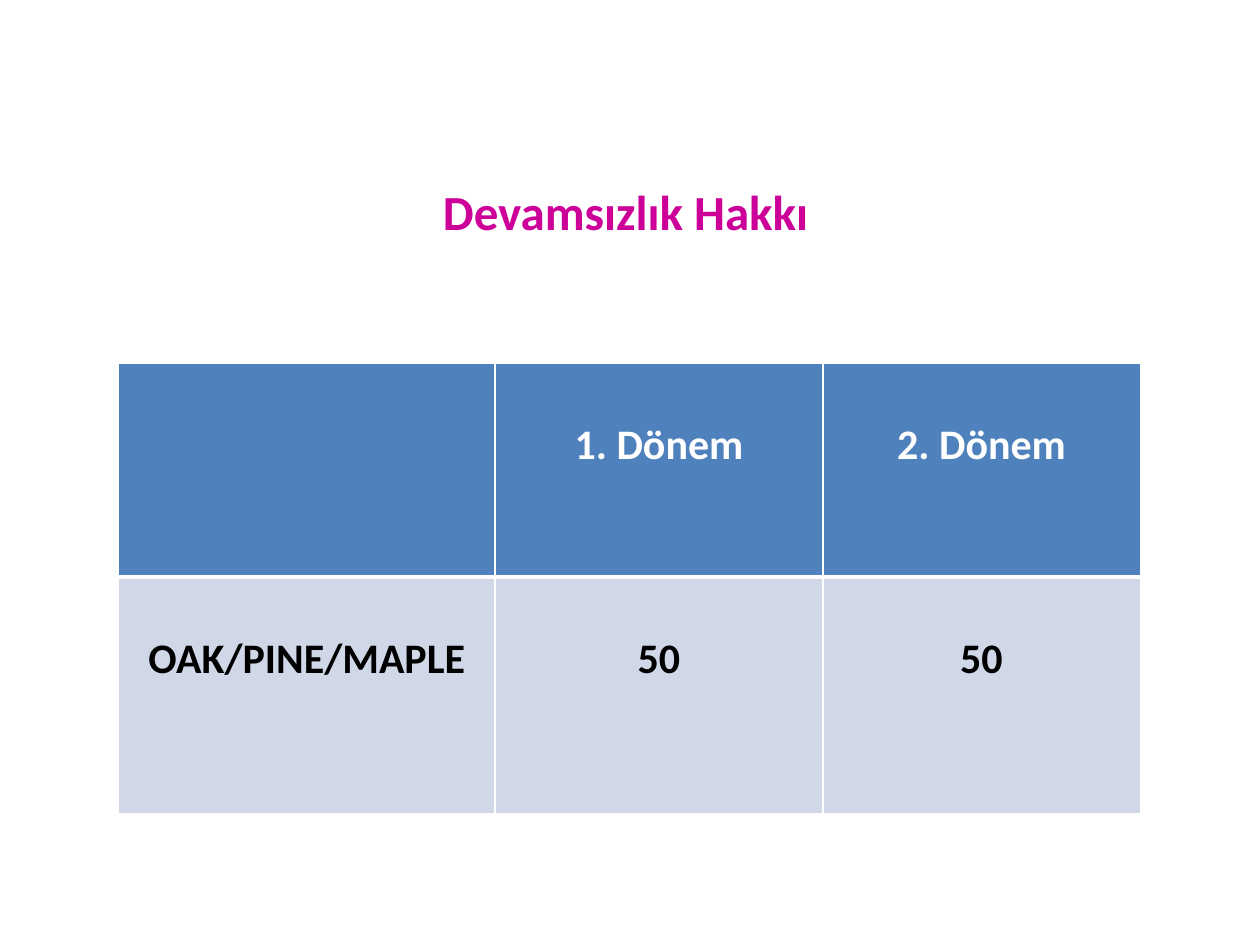
from dataclasses import dataclass

from lxml.etree import SubElement
from pptx import Presentation
from pptx.dml.color import RGBColor
from pptx.enum.text import PP_ALIGN as Align
from pptx.oxml.ns import qn
from pptx.util import Inches, Pt

FONT = "Calibri"
MAGENTA = RGBColor(0xCC, 0x00, 0x99)
BLUE = RGBColor(0x4F, 0x81, 0xBD)
PALE_BLUE = RGBColor(0xD0, 0xD8, 0xE8)
WHITE = RGBColor(0xFF, 0xFF, 0xFF)
BLACK = RGBColor(0x00, 0x00, 0x00)

COLUMN_WIDTHS = (2.99, 2.6, 2.52)
THIN, THICK = 1, 3


@dataclass(frozen=True)
class TableRow:
    labels: tuple[str, ...]
    height: float
    fill: RGBColor
    color: RGBColor
    top_line: int
    bottom_line: int


ROWS = (
    TableRow(("", "1. Dönem", "2. Dönem"), 1.7, BLUE, WHITE, THIN, THICK),
    TableRow(("OAK/PINE/MAPLE", "50", "50"), 1.88, PALE_BLUE, BLACK, THICK, THIN),
)


def write_centered(frame, text: str, size: int, color: RGBColor) -> None:
    para = frame.paragraphs[0]
    para.alignment = Align.CENTER
    span = para.add_run()
    span.text = text
    span.font.name = FONT
    span.font.size = Pt(size)
    span.font.bold = True
    span.font.color.rgb = color


def add_borders(cell, top: int, bottom: int) -> None:
    """Draw white cell borders; call before the cell is filled."""
    properties = cell._tc.get_or_add_tcPr()
    for side, width in (("L", THIN), ("R", THIN), ("T", top), ("B", bottom)):
        line = SubElement(properties, qn(f"a:ln{side}"), w=str(Pt(width)))
        fill = SubElement(line, qn("a:solidFill"))
        SubElement(fill, qn("a:srgbClr"), val=str(WHITE))


def add_title(slide) -> None:
    box = slide.shapes.add_textbox(Inches(2.01), Inches(1.39), Inches(5.91), Inches(0.57))
    box.text_frame.word_wrap = True
    write_centered(box.text_frame, "Devamsızlık Hakkı", 28, MAGENTA)


def add_absence_table(slide) -> None:
    table = slide.shapes.add_table(
        len(ROWS), len(COLUMN_WIDTHS), Inches(0.94), Inches(2.88),
        Inches(sum(COLUMN_WIDTHS)), Inches(sum(row.height for row in ROWS)),
    ).table
    for column, width in zip(table.columns, COLUMN_WIDTHS):
        column.width = Inches(width)
    for table_row, row in zip(table.rows, ROWS):
        table_row.height = Inches(row.height)
        for cell, label in zip(table_row.cells, row.labels):
            add_borders(cell, row.top_line, row.bottom_line)
            cell.fill.solid()
            cell.fill.fore_color.rgb = row.fill
            cell.margin_top = Inches(0.45)
            if label:
                write_centered(cell.text_frame, label, 24, row.color)


def main() -> None:
    deck = Presentation()
    deck.slide_width, deck.slide_height = Inches(10), Inches(7.5)
    slide = deck.slides.add_slide(deck.slide_layouts[6])
    add_title(slide)
    add_absence_table(slide)
    deck.save("out.pptx")


if __name__ == "__main__":
    main()
